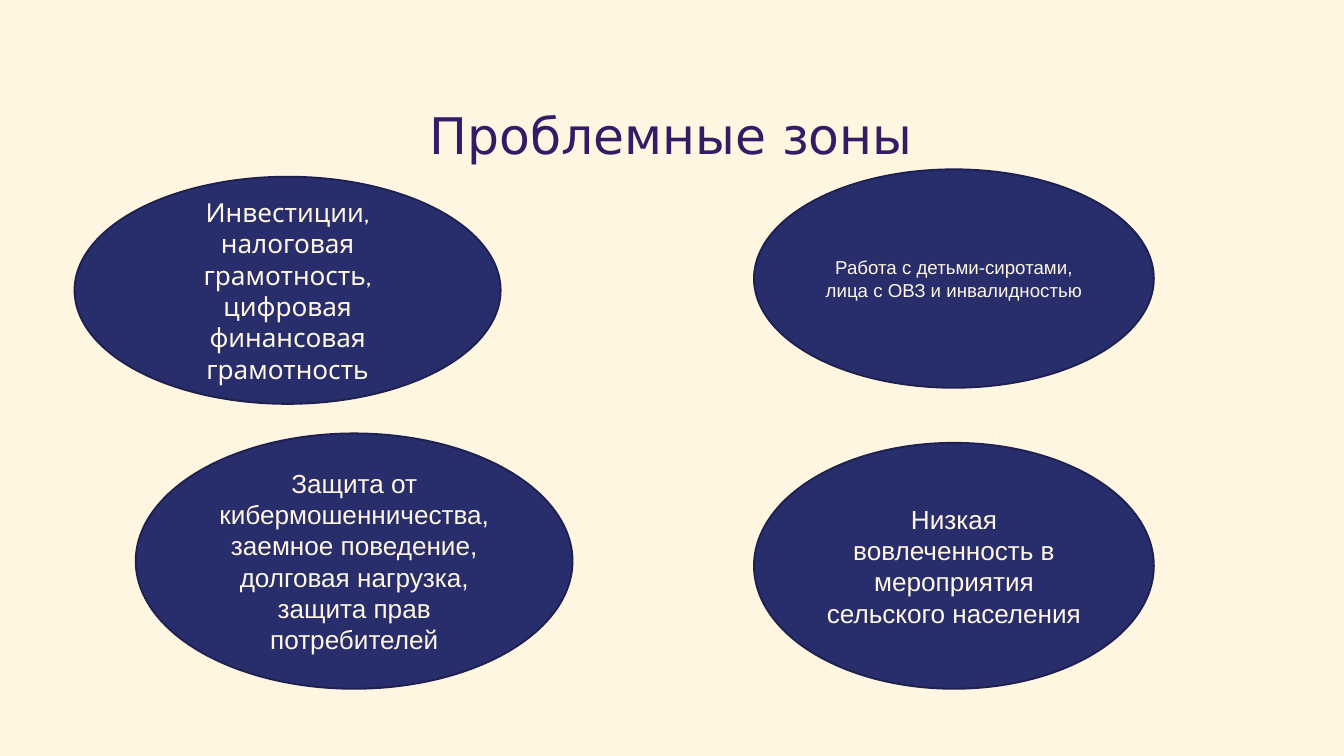
from lxml.etree import SubElement
from pptx import Presentation
from pptx.dml.color import RGBColor
from pptx.enum.shapes import MSO_SHAPE
from pptx.enum.text import MSO_ANCHOR, MSO_AUTO_SIZE, PP_ALIGN
from pptx.oxml.ns import qn
from pptx.util import Inches, Pt

CREAM = RGBColor(0xFE, 0xF6, 0xE0)
PURPLE = RGBColor(0x35, 0x1B, 0x65)
NAVY = RGBColor(0x28, 0x2D, 0x6C)
DARK_NAVY = RGBColor(0x1E, 0x21, 0x50)

prs = Presentation()
prs.slide_width, prs.slide_height = Inches(20), Inches(11.25)
UNIT = prs.slide_width // 20  # square grid, 20 columns across


def place(shape, left, top, width, height):
    shape.left, shape.top = int(left * UNIT), int(top * UNIT)
    shape.width, shape.height = int(width * UNIT), int(height * UNIT)


def write(shape, text, font, size, color):
    frame = shape.text_frame
    frame.text = text
    frame.word_wrap = True
    frame.auto_size = MSO_AUTO_SIZE.NONE
    frame.vertical_anchor = MSO_ANCHOR.MIDDLE
    paragraph = frame.paragraphs[0]
    paragraph.alignment = PP_ALIGN.CENTER
    run_font = paragraph.runs[0].font
    run_font.name, run_font.size = font, Pt(size)
    run_font.color.rgb = color


# Background and title
slide = prs.slides.add_slide(prs.slide_layouts[1])
slide.background.fill.solid()
slide.background.fill.fore_color.rgb = CREAM
heading = slide.shapes.title
place(heading, 1.19, 1.38, 17.6, 1.25)
write(heading, "Проблемные зоны", "DejaVu Sans", 54, PURPLE)

# The first zone is the body placeholder, shaped as an ellipse without a bullet
skills_zone = slide.placeholders[1]
place(skills_zone, 1.11, 2.63, 6.34, 3.38)
geometry = SubElement(skills_zone._element.spPr, qn("a:prstGeom"), prst="ellipse")
SubElement(geometry, qn("a:avLst"))
write(skills_zone,
      "Инвестиции, налоговая грамотность, цифровая финансовая грамотность",
      "Cabin", 28, CREAM)
skills_paragraph = skills_zone.text_frame.paragraphs[0]
skills_paragraph.space_before = Pt(6.4)
properties = skills_paragraph._p.get_or_add_pPr()
properties.set("marL", "0")
properties.set("indent", "0")
SubElement(properties, qn("a:buNone"))

# Other zones: the right column shares its left edge, the lower row its bottom
RIGHT_COLUMN, RIGHT_WIDTH, BOTTOM = 11.22, 5.95, 10.25
other_zones = [
    (2.02, BOTTOM - 3.8, 6.5, 3.8, 28,
     "Защита от кибермошенничества, заемное поведение, долговая нагрузка, "
     "защита прав потребителей"),
    (RIGHT_COLUMN, 2.52, RIGHT_WIDTH, 3.25, 20,
     "Работа с детьми-сиротами, лица с ОВЗ и инвалидностью"),
    (RIGHT_COLUMN, BOTTOM - 3.66, RIGHT_WIDTH, 3.66, 28,
     "Низкая вовлеченность в мероприятия сельского населения"),
]
zones = [skills_zone]
for left, top, width, height, size, text in other_zones:
    zone = slide.shapes.add_shape(MSO_SHAPE.OVAL, 0, 0, UNIT, UNIT)
    place(zone, left, top, width, height)
    zone.shadow.inherit = False
    write(zone, text, "Arial", size, CREAM)
    zones.append(zone)

# Common look of all zones
for zone in zones:
    zone.fill.solid()
    zone.fill.fore_color.rgb = NAVY
    zone.line.color.rgb = DARK_NAVY
    zone.line.width = Pt(2)

prs.save("out.pptx")
